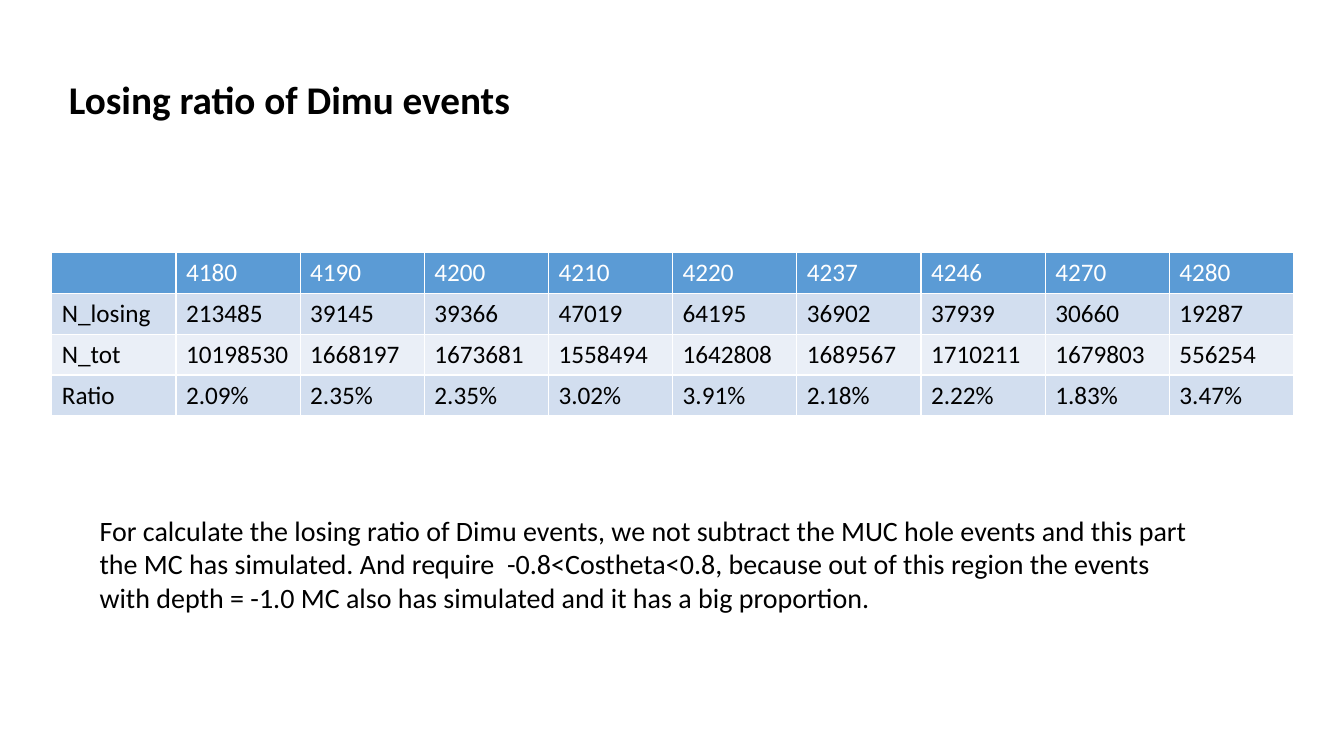
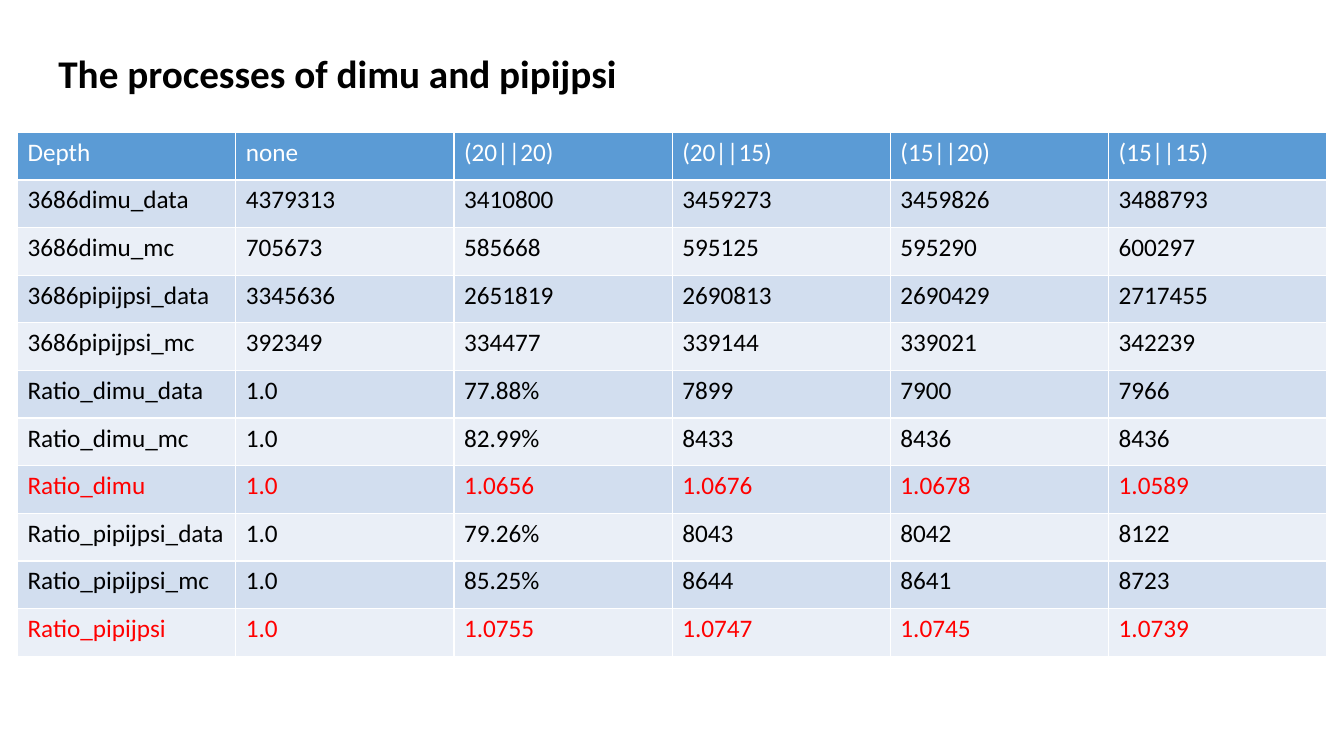
import pptx
import pptx.dml.color
import pptx.enum.text
import pptx.util

Pt = pptx.util.Pt

COLORS = {
    "text": "000000",
    "header_text": "FFFFFF",
    "highlight": "FF0000",
    "header": "5B9BD5",
    "odd_row": "D2DEEF",
    "even_row": "EAEFF7",
}
FONT = "Calibri"
TITLE_SIZE, NOTE_SIZE, TABLE_SIZE = 28, 20, 18
TITLE_ONLY = 5

LOSING_RATIOS = [
    ["", "4180", "4190", "4200", "4210", "4220", "4237", "4246", "4270", "4280"],
    ["N_losing", "213485", "39145", "39366", "47019", "64195",
     "36902", "37939", "30660", "19287"],
    ["N_tot", "10198530", "1668197", "1673681", "1558494", "1642808",
     "1689567", "1710211", "1679803", "556254"],
    ["Ratio", "2.09%", "2.35%", "2.35%", "3.02%", "3.91%",
     "2.18%", "2.22%", "1.83%", "3.47%"],
]
LOSING_NOTE = (
    "For calculate the losing ratio of Dimu events, we not subtract the MUC hole "
    "events and this part the MC has simulated. And require  -0.8<Costheta<0.8, "
    "because out of this region the events with depth = -1.0 MC also has simulated "
    "and it has a big proportion."
)
DEPTH_CUTS = [
    ["Depth", "none", "(20||20)", "(20||15)", "(15||20)", "(15||15)"],
    ["3686dimu_data", "4379313", "3410800", "3459273", "3459826", "3488793"],
    ["3686dimu_mc", "705673", "585668", "595125", "595290", "600297"],
    ["3686pipijpsi_data", "3345636", "2651819", "2690813", "2690429", "2717455"],
    ["3686pipijpsi_mc", "392349", "334477", "339144", "339021", "342239"],
    ["Ratio_dimu_data", "1.0", "77.88%", "7899", "7900", "7966"],
    ["Ratio_dimu_mc", "1.0", "82.99%", "8433", "8436", "8436"],
    ["Ratio_dimu", "1.0", "1.0656", "1.0676", "1.0678", "1.0589"],
    ["Ratio_pipijpsi_data", "1.0", "79.26%", "8043", "8042", "8122"],
    ["Ratio_pipijpsi_mc", "1.0", "85.25%", "8644", "8641", "8723"],
    ["Ratio_pipijpsi", "1.0", "1.0755", "1.0747", "1.0745", "1.0739"],
]


def rgb(name):
    return pptx.dml.color.RGBColor.from_string(COLORS[name])


def style_font(paragraph, size, color="text", bold=False):
    font = paragraph.font
    font.name, font.size, font.bold = FONT, Pt(size), bold
    font.color.rgb = rgb(color)


def add_titled_slide(deck, text, left, top, width):
    slide = deck.slides.add_slide(deck.slide_layouts[TITLE_ONLY])
    title = slide.shapes.title
    title.left, title.top, title.width, title.height = map(Pt, (left, top, width, 41))
    frame = title.text_frame
    frame.text = text
    frame.word_wrap = False
    frame.auto_size = pptx.enum.text.MSO_AUTO_SIZE.NONE
    frame.vertical_anchor = pptx.enum.text.MSO_ANCHOR.TOP
    heading = frame.paragraphs[0]
    heading.alignment = pptx.enum.text.PP_ALIGN.LEFT
    style_font(heading, TITLE_SIZE, bold=True)
    return slide


def add_data_table(slide, rows, left, top, column_width, row_height, highlighted=()):
    """Add a banded table; rows whose label is in highlighted get red text."""
    column_count = len(rows[0])
    table = slide.shapes.add_table(
        len(rows), column_count, Pt(left), Pt(top),
        Pt(column_width * column_count), Pt(row_height * len(rows))).table
    for column in table.columns:
        column.width = Pt(column_width)
    for row_index, values in enumerate(rows):
        table.rows[row_index].height = Pt(row_height)
        if row_index == 0:
            fill, color = "header", "header_text"
        else:
            fill = "odd_row" if row_index % 2 else "even_row"
            color = "highlight" if values[0] in highlighted else "text"
        for cell, value in zip(table.rows[row_index].cells, values):
            cell.fill.solid()
            cell.fill.fore_color.rgb = rgb(fill)
            cell.text = value
            style_font(cell.text_frame.paragraphs[0], TABLE_SIZE, color)


def add_note(slide, text, left, top, width, height):
    frame = slide.shapes.add_textbox(*map(Pt, (left, top, width, height))).text_frame
    frame.word_wrap = True
    frame.text = text
    style_font(frame.paragraphs[0], NOTE_SIZE)


def main():
    deck = pptx.Presentation()
    deck.slide_width, deck.slide_height = Pt(960), Pt(540)

    losing = add_titled_slide(deck, "Losing ratio of Dimu events", 42, 50.5, 334)
    add_data_table(losing, LOSING_RATIOS, 37, 180.3, 88.7, 29.2)
    add_note(losing, LOSING_NOTE, 64, 363, 799, 80)

    processes = add_titled_slide(
        deck, "The processes of dimu and pipijpsi", 34.5, 31.5, 418)
    add_data_table(processes, DEPTH_CUTS, 12.5, 94.5, 155.9, 34.04,
                   highlighted=("Ratio_dimu", "Ratio_pipijpsi"))

    deck.save("out.pptx")


if __name__ == "__main__":
    main()
